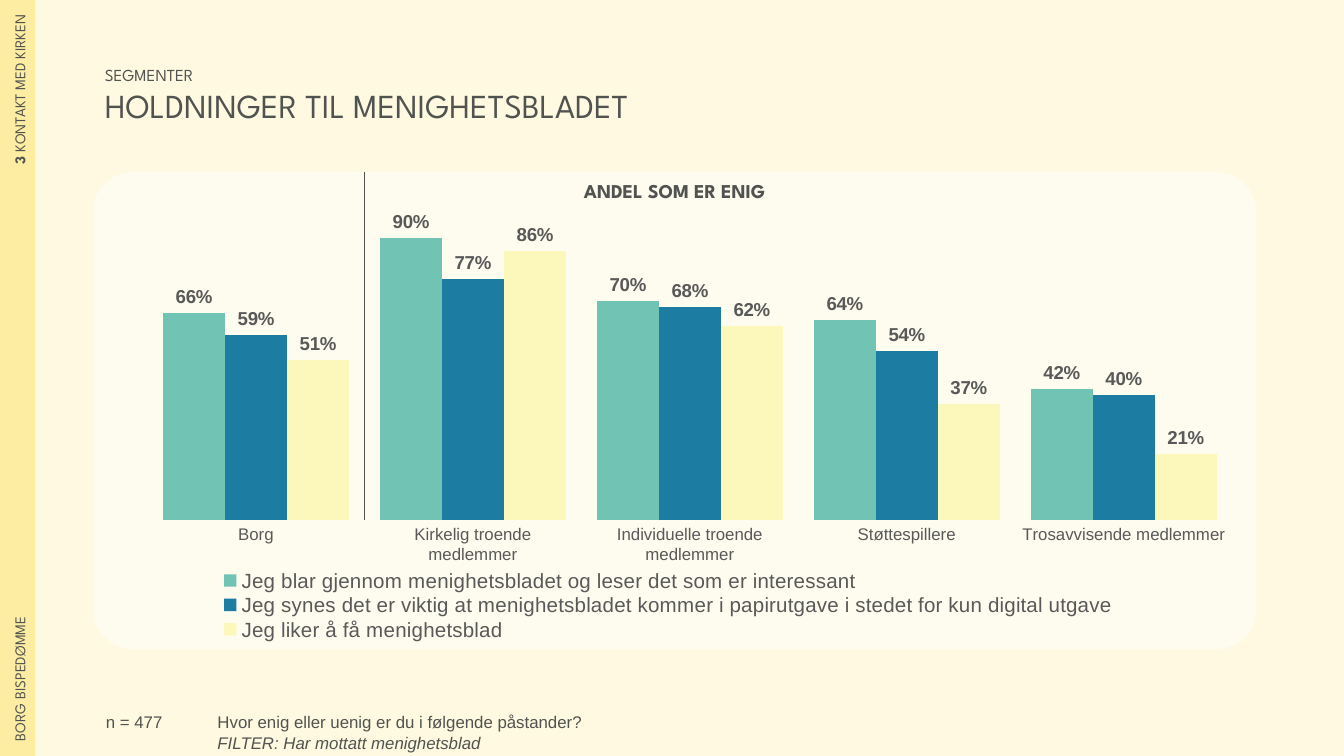
from lxml.etree import SubElement
from pptx import Presentation
from pptx.chart.data import CategoryChartData
from pptx.dml.color import RGBColor
from pptx.enum.chart import XL_CHART_TYPE, XL_LABEL_POSITION, XL_LEGEND_POSITION, XL_TICK_MARK
from pptx.enum.shapes import MSO_CONNECTOR, MSO_SHAPE
from pptx.enum.text import MSO_ANCHOR, PP_ALIGN
from pptx.oxml import parse_xml
from pptx.oxml.ns import nsdecls, qn
from pptx.util import Inches, Pt

# Content: each text is a list of paragraphs, each paragraph a list of (text, style)
TITLE = [[("SEGMENTER", {"size": 9})], [("HOLDNINGER TIL MENIGHETSBLADET", {"size": 18})]]
SIDEBAR = [
    ([[("3", {"bold": True}), (" KONTAKT MED KIRKEN", {})]], PP_ALIGN.RIGHT),
    ([[("BORG BISPEDØMME", {})]], PP_ALIGN.LEFT),
]
HEADING = [[("ANDEL SOM ER ENIG", {"bold": True})]]
SAMPLE = [[("n = 477", {})]]
QUESTION = [
    [("Hvor enig eller uenig er du i følgende påstander?", {})],
    [("FILTER: Har mottatt menighetsblad", {"italic": True})],
]
CATEGORIES = ["Borg", "Kirkelig troende medlemmer", "Individuelle troende medlemmer",
              "Støttespillere", "Trosavvisende medlemmer"]
SERIES = [
    ("Jeg blar gjennom menighetsbladet og leser det som er interessant",
     (0.66, 0.90, 0.70, 0.64, 0.42), "71C3B3"),
    ("Jeg synes det er viktig at menighetsbladet kommer i papirutgave i stedet for kun digital utgave",
     (0.59, 0.77, 0.68, 0.54, 0.40), "1C7CA1"),
    ("Jeg liker å få menighetsblad", (0.51, 0.86, 0.62, 0.37, 0.21), "FCF7BA"),
]


class Theme:
    display, body = "League Spartan", "Arial"
    paper, sidebar, card = "FEF9E0", "FDEDA2", "FFFFFF"
    ink, chart_ink = "515350", "595959"
    side, note, heading, axis, label, legend = 8, 9, 10.5, 9, 10, 11


# Layout in inches
W = 10
H = W * 9 / 16
BAR_W = 0.26
CARD = (0.69, 1.28, 8.66, 3.55)
NOTE_TOP, NOTE_H = 5.25, 0.2
PLOT = (0.047, 0.073, 0.932, 0.657)  # shares of the chart
LEGEND = (0.08, 0.83, 0.83, 0.155)


def rgb(value):
    return RGBColor.from_string(value)


def box(*lengths):
    return [Inches(v) for v in lengths]


def set_font(font, size, color=Theme.chart_ink, name=Theme.body, bold=False, italic=False):
    font.size, font.name, font.bold, font.italic = Pt(size), name, bold, italic
    font.color.rgb = rgb(color)


def fill(target, color):
    target.fill.solid()
    target.fill.fore_color.rgb = rgb(color)


def write(tf, paragraphs, size, name, align=PP_ALIGN.LEFT):
    for i, runs in enumerate(paragraphs):
        p = tf.add_paragraph() if i else tf.paragraphs[0]
        p.alignment = align
        for text, style in runs:
            r = p.add_run()
            r.text = text
            set_font(r.font, **{"size": size, "color": Theme.ink, "name": name, **style})


def add_text(s, at, *args, **kwargs):
    tf = s.shapes.add_textbox(*box(*at)).text_frame
    tf.word_wrap = True
    write(tf, *args, **kwargs)


def set_layout(parent, index, shares, inner=False):
    for old in parent.findall(qn("c:layout")):
        parent.remove(old)
    target = '<c:layoutTarget val="inner"/>' if inner else ""
    modes = '<c:xMode val="edge"/><c:yMode val="edge"/>'
    sizes = "".join(f'<c:{k} val="{v}"/>' for k, v in zip("xywh", shares))
    parent.insert(index, parse_xml(
        f'<c:layout {nsdecls("c")}><c:manualLayout>{target}{modes}{sizes}</c:manualLayout></c:layout>'))


def add_bars(s):
    data = CategoryChartData(number_format="0%")
    data.categories = CATEGORIES
    for name, values, _ in SERIES:
        data.add_series(name, values)
    chart = s.shapes.add_chart(XL_CHART_TYPE.COLUMN_CLUSTERED, *box(*CARD), data).chart
    chart.has_title = False
    set_font(chart.font, Theme.label, Theme.ink, Theme.display)
    # Axes
    cat, val = chart.category_axis, chart.value_axis
    cat.major_tick_mark = XL_TICK_MARK.NONE
    cat.format.line.fill.background()
    set_font(cat.tick_labels.font, Theme.axis)
    val.minimum_scale, val.maximum_scale = 0, 1
    val.has_major_gridlines = val.visible = False
    # Columns
    plot = chart.plots[0]
    plot.gap_width, plot.overlap, plot.vary_by_categories = 50, 0, False
    for series, (_, _, color) in zip(plot.series, SERIES):
        fill(series.format, color)
        labels = series.data_labels
        labels.show_value = True
        labels.number_format, labels.number_format_is_linked = "0%", False
        labels.position = XL_LABEL_POSITION.OUTSIDE_END
        set_font(labels.font, Theme.label, bold=True)
    # Legend
    chart.has_legend = True
    legend = chart.legend
    legend.position, legend.include_in_layout = XL_LEGEND_POSITION.RIGHT, False
    set_font(legend.font, Theme.legend)
    set_layout(plot._element.getparent(), 0, PLOT, inner=True)
    set_layout(legend._element, 1, LEGEND)


def add_sidebar(s):
    table = s.shapes.add_table(len(SIDEBAR), 1, *box(0, 0, BAR_W, H)).table
    table.first_row = table.horz_banding = False
    table._tbl.tblPr.find(qn("a:tableStyleId")).text = "{2D5ABB26-0587-4C30-8999-92F81FD0307C}"
    for row, (paragraphs, align) in enumerate(SIDEBAR):
        cell = table.cell(row, 0)
        fill(cell, Theme.sidebar)
        cell.vertical_anchor = MSO_ANCHOR.MIDDLE
        cell.margin_left = cell.margin_right = cell.margin_top = cell.margin_bottom = Inches(0.11)
        cell._tc.tcPr.set("vert", "vert270")
        write(cell.text_frame, paragraphs, Theme.side, Theme.display, align)


def main():
    prs = Presentation()
    prs.slide_width, prs.slide_height = box(W, H)
    s = prs.slides.add_slide(prs.slide_layouts[5])
    fill(s.background, Theme.paper)
    left, top, width, height = CARD

    # Title
    title = s.shapes.title
    title.left, title.top, title.width, title.height = box(0.68, 0.43, 7.91, 0.56)
    title.text_frame.vertical_anchor = MSO_ANCHOR.MIDDLE
    write(title.text_frame, TITLE, 18, Theme.display)

    # Card and chart
    card = s.shapes.add_shape(MSO_SHAPE.ROUNDED_RECTANGLE, *box(*CARD))
    card.adjustments[0] = 0.084
    card.shadow.inherit = False
    card.line.fill.background()
    fill(card, Theme.card)
    color = card._element.spPr.find(qn("a:solidFill"))[0]
    SubElement(color, qn("a:alpha")).set("val", "50000")
    add_bars(s)
    add_sidebar(s)

    # Notes and chart heading
    add_text(s, (1.52, NOTE_TOP, 7.8, NOTE_H), QUESTION, Theme.note, Theme.body)
    add_text(s, (left, NOTE_TOP, 1.07, NOTE_H), SAMPLE, Theme.note, Theme.body)
    add_text(s, (left, top, width, 0.28), HEADING, Theme.heading, Theme.display,
             align=PP_ALIGN.CENTER)

    # Divider between the first category and the segments
    x = left + width * (PLOT[0] + PLOT[2] / len(CATEGORIES))
    bottom = top + height * (PLOT[1] + PLOT[3])
    line = s.shapes.add_connector(MSO_CONNECTOR.STRAIGHT, *box(x, top, x, bottom))
    line.line.width = Pt(0.5)
    line.line.color.rgb = rgb(Theme.ink)
    SubElement(line._element.spPr, qn("a:effectLst"))

    prs.save("out.pptx")


if __name__ == "__main__":
    main()
